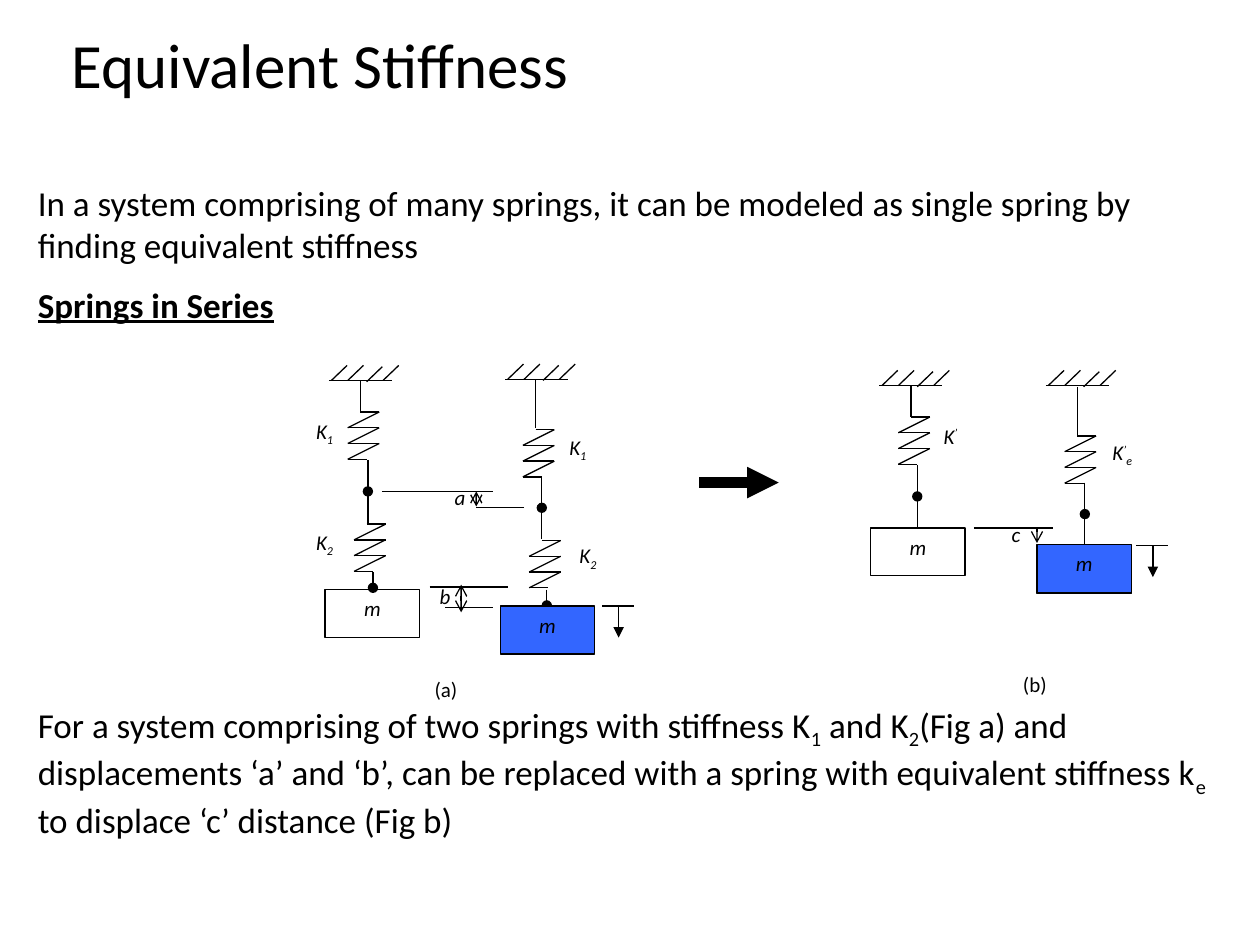
from itertools import pairwise

from pptx import Presentation
from pptx.dml.color import RGBColor
from pptx.enum.shapes import MSO_CONNECTOR, MSO_SHAPE
from pptx.enum.text import MSO_ANCHOR, MSO_AUTO_SIZE, PP_ALIGN
from pptx.oxml.ns import qn
from pptx.util import Inches, Pt
from lxml.etree import SubElement

BLACK = RGBColor(0x00, 0x00, 0x00)
BLUE = RGBColor(0x33, 0x66, 0xFF)
SUB, SUPER = -25000, 30000

prs = Presentation()
prs.slide_width, prs.slide_height = Inches(10), Inches(7.5)
slide = prs.slides.add_slide(prs.slide_layouts[1])


def add_line(x1, y1, x2, y2, head=None, tail=None, width=0.75):
    """Draw a black line in inches; head and tail name the end markers."""
    line = slide.shapes.add_connector(
        MSO_CONNECTOR.STRAIGHT, Inches(x1), Inches(y1), Inches(x2), Inches(y2))
    line.line.color.rgb = BLACK
    line.line.width = Pt(width)
    properties = line._element.spPr
    outline = properties.find(qn("a:ln"))
    for tag, marker in (("a:headEnd", head), ("a:tailEnd", tail)):
        if marker:
            SubElement(outline, qn(tag)).set("type", marker)
    SubElement(properties, qn("a:effectLst"))


def add_run(paragraph, text, size, baseline=0, italic=False, bold=False):
    run = paragraph.add_run()
    run.text = text
    font = run.font
    font.name, font.size, font.color.rgb = "Calibri", Pt(size), BLACK
    font.italic, font.bold, font.underline = italic, bold, bold
    if baseline:
        run._r.get_or_add_rPr().set("baseline", str(baseline))


# Title and body
title = slide.shapes.title
title.left, title.top, title.width, title.height = 0, 0, Inches(5.08), Inches(1)
title.text_frame.vertical_anchor = MSO_ANCHOR.MIDDLE
heading = title.text_frame.paragraphs[0]
heading.alignment = PP_ALIGN.CENTER
add_run(heading, "Equivalent Stiffness", 36)

body = slide.placeholders[1]
body.left, body.top = Inches(0.2), Inches(1.39)
body.width, body.height = Inches(9.53), Inches(5.43)
body.text_frame.auto_size = MSO_AUTO_SIZE.NONE

# The last paragraph leaves room for the figure above it
statements = [
    (0, False, [("In a system comprising of many springs, it can be modeled as "
                 "single spring by finding equivalent stiffness", 0)]),
    (10, True, [("Springs in Series", 0)]),
    (216, False, [
        ("For a system comprising of two springs with stiffness K", 0), ("1", SUB),
        (" and K", 0), ("2", SUB),
        ("(Fig a) and displacements ‘a’ and ‘b’, can be replaced with a spring "
         "with equivalent stiffness k", 0), ("e", SUB),
        (" to displace ‘c’ distance (Fig b)", 0)]),
]
for i, (space_before, bold, runs) in enumerate(statements):
    frame = body.text_frame
    paragraph = frame.add_paragraph() if i else frame.paragraphs[0]
    properties = paragraph._p.get_or_add_pPr()
    properties.set("marL", "0")
    properties.set("indent", "0")
    SubElement(properties, qn("a:buNone"))
    paragraph.space_before = Pt(space_before)
    for text, baseline in runs:
        add_run(paragraph, text, 20, baseline, bold=bold)

# Fixed supports: a ceiling line with four hatches
for x, y in [(2.61, 3.02), (4.01, 3.01), (6.98, 3.06), (8.3, 3.06)]:
    add_line(x, y, x + 0.5, y)
    for dx, dy in [(0.02, 0), (0.15, 0), (0.3, 0.01), (0.43, 0)]:
        add_line(x + dx, y + dy, x + dx + 0.125, y + dy - 0.12)

# Springs: three turns between a lead-in and a lead-out
COIL = [(0.1, 0), (0.25, 0), (0, 0.125), (0.25, 0.125),
        (0, 0.25), (0.25, 0.25), (0, 0.375), (0.15, 0.375)]
for x, y in [(2.76, 3.27), (2.81, 4.16), (4.15, 3.41),
             (4.2, 4.29), (7.13, 3.31), (8.45, 3.46)]:
    for (dx1, dy1), (dx2, dy2) in pairwise(COIL):
        add_line(x + dx1, y + dy1, x + dx2, y + dy2)

# Rods from support to spring
for x, top, bottom in [(2.86, 3.02, 3.27), (4.25, 3.02, 3.4),
                       (7.23, 3.06, 3.31), (8.55, 3.07, 3.45)]:
    add_line(x, top, x, bottom)

# Joints: a rod ending in a dot, then a rod onwards
for x, y in [(2.92, 3.65), (4.3, 3.78), (7.28, 3.69), (8.61, 3.83)]:
    add_line(x, y, x, y + 0.25, tail="oval")
    add_line(x, y + 0.25, x, y + 0.5)
for x, y in [(2.96, 4.54), (4.34, 4.68)]:
    add_line(x, y, x, y + 0.125, tail="oval")

# Masses: blue ones are displaced
for x, y, color, name in [(2.58, 4.68, None, "m"), (3.97, 4.81, BLUE, "m"),
                          (6.91, 4.19, None, "m"), (8.23, 4.33, None, ""),
                          (8.23, 4.32, BLUE, "m")]:
    mass = slide.shapes.add_shape(
        MSO_SHAPE.RECTANGLE, Inches(x), Inches(y), Inches(0.75), Inches(0.38))
    mass.shadow.inherit = False
    mass.line.color.rgb = BLACK
    mass.line.width = Pt(0.75)
    if color:
        mass.fill.solid()
        mass.fill.fore_color.rgb = color
    else:
        mass.fill.background()
    if name:
        mass.text_frame.vertical_anchor = MSO_ANCHOR.TOP
        paragraph = mass.text_frame.paragraphs[0]
        paragraph.alignment = PP_ALIGN.CENTER
        add_run(paragraph, name, 12, italic=True)

# Displacement levels a, b, c and their arrows
for x1, x2, y in [(4.16, 3.78, 4.03), (3.03, 3.91, 3.9), (3.41, 4.03, 4.66),
                  (3.91, 3.53, 4.82), (7.73, 8.36, 4.19)]:
    add_line(x1, y, x2, y)
add_line(3.78, 3.9, 3.78, 4.02, head="arrow", tail="arrow")
add_line(3.66, 4.64, 3.66, 4.86, head="arrow", tail="arrow")
add_line(8.23, 4.19, 8.23, 4.31, tail="arrow")

# Direction of motion beside each displaced mass
for x, y in [(4.78, 4.81), (9.02, 4.33)]:
    add_line(x, y, x + 0.25, y)
    add_line(x + 0.13, y, x + 0.13, y + 0.25, tail="triangle")

# From the two springs to the equivalent one
add_line(5.55, 3.83, 6.18, 3.83, tail="triangle", width=6)

# Labels
K1 = [("K", 0), ("1", SUB)]
K2 = [("K", 0), ("2", SUB)]
labels = [
    (2.41, 3.27, 0.38, True, K1), (4.42, 3.4, 0.38, True, K1),
    (2.41, 4.15, 0.38, True, K2), (4.5, 4.26, 0.38, True, K2),
    (7.39, 3.31, 0.38, True, [("K", 0), ("’", SUPER)]),
    (8.73, 3.44, 0.55, True, [("K", 0), ("’", SUPER), ("e", SUB)]),
    (3.51, 3.8, 0.38, True, [("a", 0)]),
    (3.39, 4.58, 0.38, True, [("b", 0)]),
    (7.93, 4.09, 0.38, True, [("c", 0)]),
    (3.35, 5.32, 0.62, False, [("(a)", 0)]),
    (8.02, 5.28, 0.62, False, [("(b)", 0)]),
]
for x, y, width, italic, runs in labels:
    label = slide.shapes.add_textbox(
        Inches(x), Inches(y), Inches(width), Inches(0.38))
    label.text_frame.word_wrap = True
    for text, baseline in runs:
        add_run(label.text_frame.paragraphs[0], text, 12, baseline, italic)

prs.save("out.pptx")
